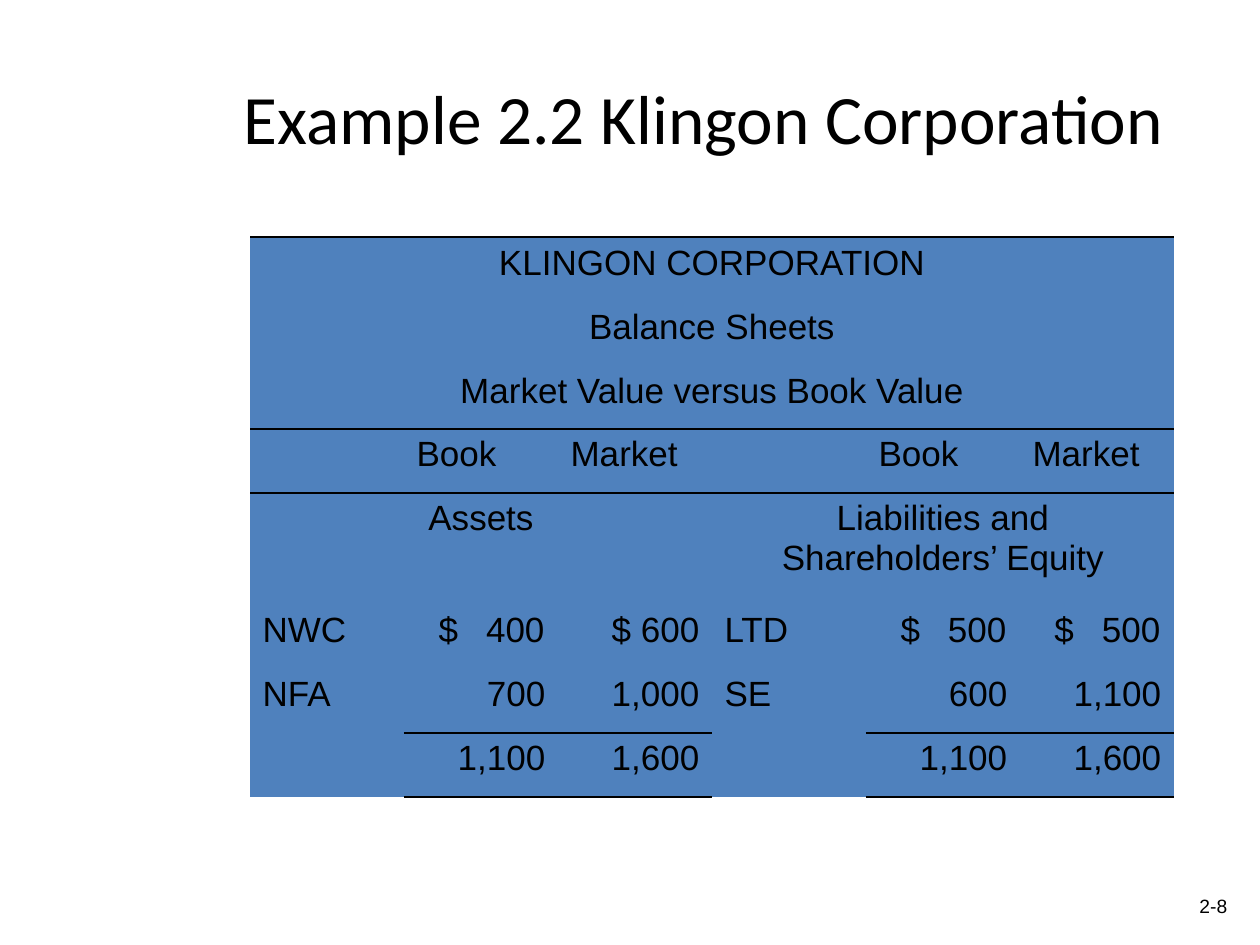
from dataclasses import dataclass

from lxml import etree
from pptx import Presentation
from pptx import util as u
from pptx.dml.color import RGBColor
from pptx.enum import text
from pptx.oxml import ns

PX_PER_INCH = 126
NO_GRID_STYLE = "{2D5ABB26-0587-4C30-8999-92F81FD0307C}"
LEFT, CENTER, RIGHT = text.PP_ALIGN.LEFT, text.PP_ALIGN.CENTER, text.PP_ALIGN.RIGHT


@dataclass(frozen=True)
class Theme:
    ink: str = "000000"
    cell: str = "4F81BD"
    title_font: str = "Calibri"
    body_font: str = "Arial"
    title_size: float = 39.6
    table_size: float = 20
    number_size: float = 11
    rule_width: float = 1


def px(count):
    return u.Emu(round(count * u.Inches(1) / PX_PER_INCH))


def write(frame, words, *, font, size, color, align=LEFT, tabs=()):
    """Fill the first paragraph; tabs holds (px, alignment) pairs."""
    para = frame.paragraphs[0]
    para.alignment = align
    if tabs:
        stops = etree.SubElement(para._p.get_or_add_pPr(), ns.qn("a:tabLst"))
        for place, side in tabs:
            etree.SubElement(stops, ns.qn("a:tab"), pos=str(px(place)), algn=side)
    span = para.add_run()
    span.text = words
    span.font.name = font
    span.font.size = u.Pt(size)
    span.font.color.rgb = RGBColor.from_string(color)


class Page:
    def __init__(self, deck, theme):
        self.theme = theme
        self.slide = deck.slides.add_slide(deck.slide_layouts[5])

    def title(self, words, left, top, width, height):
        box = self.slide.shapes.title
        box.left, box.top, box.width, box.height = map(px, (left, top, width, height))
        box.text_frame.vertical_anchor = text.MSO_ANCHOR.MIDDLE
        write(box.text_frame, words, font=self.theme.title_font,
              size=self.theme.title_size, color=self.theme.ink, align=CENTER)

    def label(self, words, left, top, width, height):
        box = self.slide.shapes.add_textbox(*map(px, (left, top, width, height)))
        box.text_frame.word_wrap = False
        write(box.text_frame, words, font=self.theme.body_font,
              size=self.theme.number_size, color=self.theme.ink, align=CENTER)

    def table(self, left, top, column_width, row_heights, columns):
        """Add an unruled table with every cell filled."""
        frame = self.slide.shapes.add_table(
            len(row_heights), columns, px(left), px(top),
            px(column_width * columns), px(sum(row_heights)))
        table = frame.table
        table.first_row = table.horz_banding = False
        table._tbl.tblPr.find(ns.qn("a:tableStyleId")).text = NO_GRID_STYLE
        for column in table.columns:
            column.width = px(column_width)
        for row, height in zip(table.rows, row_heights):
            row.height = px(height)
        for cell in table.iter_cells():
            cell.fill.solid()
            cell.fill.fore_color.rgb = RGBColor.from_string(self.theme.cell)
        return table

    def entry(self, cell, words, align=LEFT, tabs=()):
        write(cell.text_frame, words, font=self.theme.body_font,
              size=self.theme.table_size, color=self.theme.ink, align=align, tabs=tabs)

    def rule(self, cell, side):
        """Draw a border on the top ("T") or bottom ("B") of a cell."""
        line = etree.Element(ns.qn(f"a:ln{side}"), w=str(u.Pt(self.theme.rule_width)))
        fill = etree.SubElement(line, ns.qn("a:solidFill"))
        etree.SubElement(fill, ns.qn("a:srgbClr"), val=self.theme.ink)
        properties = cell._tc.get_or_add_tcPr()
        borders = properties.findall(ns.qn("a:lnT"))
        properties.insert(len(borders), line)


HEADINGS = ["KLINGON CORPORATION", "Balance Sheets", "Market Value versus Book Value"]
SECTIONS = {0: "Assets", 3: "Liabilities and Shareholders’ Equity"}
COLUMN_NAMES = ["", "Book", "Market"] * 2
FIGURES = [
    ["NWC", "\t$\t400", "$ 600", "LTD", "\t$\t500", "\t$\t500"],
    ["NFA", "700", "1,000", "SE", "600", "1,100"],
    ["", "1,100", "1,600", "", "1,100", "1,600"],
]
COLUMNS = 6
AMOUNT_COLUMNS = [1, 2, 4, 5]
DOLLAR_TABS = [(22, "l"), (128, "r")]
ROW_HEIGHTS = [64] * 4 + [112] + [64] * 3


def add_balance_sheet(page):
    table = page.table(250, 237, 154, ROW_HEIGHTS, COLUMNS)
    for row, words in enumerate(HEADINGS):
        table.cell(row, 0).merge(table.cell(row, COLUMNS - 1))
        page.entry(table.cell(row, 0), words, CENTER)

    for column, words in enumerate(COLUMN_NAMES):
        if words:
            page.entry(table.cell(3, column), words)
    for column, words in SECTIONS.items():
        table.cell(4, column).merge(table.cell(4, column + 2))
        page.entry(table.cell(4, column), words, CENTER)

    for row, values in enumerate(FIGURES, start=5):
        for column, words in enumerate(values):
            if not words:
                continue
            tabs = DOLLAR_TABS if "\t" in words else ()
            amount = column in AMOUNT_COLUMNS and not tabs
            page.entry(table.cell(row, column), words, RIGHT if amount else LEFT, tabs)

    for column in range(COLUMNS):
        page.rule(table.cell(0, column), "T")
        page.rule(table.cell(2, column), "B")
        page.rule(table.cell(3, column), "T")
    for column in AMOUNT_COLUMNS:
        page.rule(table.cell(6, column), "B")
        page.rule(table.cell(7, column), "T")
        page.rule(table.cell(7, column), "B")


def main():
    deck = Presentation()
    deck.slide_width, deck.slide_height = px(1260), px(945)
    page = Page(deck, Theme())
    page.title("Example 2.2 Klingon Corporation", 210, 38, 987, 157)
    add_balance_sheet(page)
    page.label("2-8", 1187, 888, 53, 35)
    deck.save("out.pptx")


if __name__ == "__main__":
    main()
